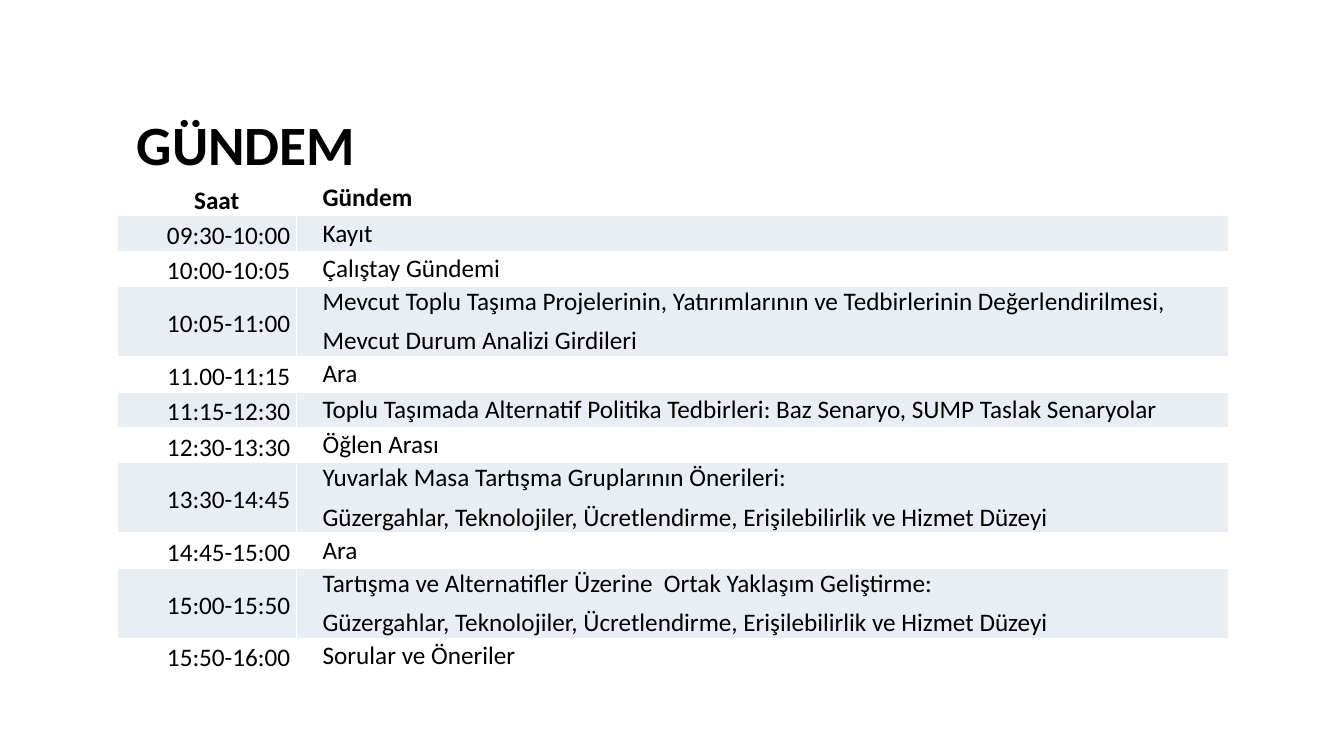
from lxml.etree import SubElement
from pptx import Presentation
from pptx.dml.color import RGBColor
from pptx.enum.text import MSO_ANCHOR, PP_ALIGN
from pptx.oxml.ns import qn
from pptx.util import Inches, Pt

BLACK = RGBColor(0x00, 0x00, 0x00)
WHITE = RGBColor(0xFF, 0xFF, 0xFF)
BAND = RGBColor(0xE9, 0xED, 0xF4)

LEFT = 1.16
COLS = (1.78, 9.25)
HEAD, LINE, PAIR = 0.27, 0.34, 0.57  # row heights: header, one line, two lines

TOPICS = "Güzergahlar, Teknolojiler, Ücretlendirme, Erişilebilirlik ve Hizmet Düzeyi"
AGENDA = [
    ("Saat", "Gündem"),
    ("09:30-10:00", "Kayıt"),
    ("10:00-10:05", "Çalıştay Gündemi"),
    ("10:05-11:00", "Mevcut Toplu Taşıma Projelerinin, Yatırımlarının ve "
                    "Tedbirlerinin Değerlendirilmesi,\nMevcut Durum Analizi Girdileri"),
    ("11.00-11:15", "Ara"),
    ("11:15-12:30", "Toplu Taşımada Alternatif Politika Tedbirleri: "
                    "Baz Senaryo, SUMP Taslak Senaryolar"),
    ("12:30-13:30", "Öğlen Arası"),
    ("13:30-14:45", f"Yuvarlak Masa Tartışma Gruplarının Önerileri:\n{TOPICS}"),
    ("14:45-15:00", "Ara"),
    ("15:00-15:50", f"Tartışma ve Alternatifler Üzerine  Ortak Yaklaşım Geliştirme:\n{TOPICS}"),
    ("15:50-16:00", "Sorular ve Öneriler"),
]


def write(frame, text, size=18, bold=False, align=PP_ALIGN.LEFT,
          indent=0, spacing=1, after=0):
    """Fill a text frame, one paragraph for each line of text."""
    frame.word_wrap = True
    for i, line in enumerate(text.split("\n")):
        para = frame.paragraphs[0] if i == 0 else frame.add_paragraph()
        run = para.add_run()
        run.text = line
        para.alignment = align
        para.line_spacing = spacing
        para.space_after = Pt(after)
        props = para._p.get_or_add_pPr()
        props.set("marL", str(Inches(indent)))
        props.set("indent", "0")
        font = run.font
        font.name, font.size, font.bold = "Calibri", Pt(size), bold
        font.color.rgb = BLACK


def paint(cell, banded):
    """Set the white borders and the fill of a cell."""
    props = cell._tc.get_or_add_tcPr()
    for side in ("lnL", "lnR", "lnT", "lnB"):
        edge = SubElement(props, qn(f"a:{side}"), w=str(Pt(1)))
        fill = SubElement(edge, qn("a:solidFill"))
        SubElement(fill, qn("a:srgbClr"), val=str(WHITE))
    if banded:
        cell.fill.solid()
        cell.fill.fore_color.rgb = BAND
    else:
        cell.fill.background()


def add_title(slide, text):
    box = slide.shapes.add_textbox(Inches(LEFT), Inches(1.23), Inches(2.56), Inches(0.38))
    box.text_frame.vertical_anchor = MSO_ANCHOR.MIDDLE
    write(box.text_frame, text, size=39.6, bold=True, align=PP_ALIGN.CENTER)


def add_agenda(slide):
    rows = [HEAD] + [PAIR if "\n" in topic else LINE for _, topic in AGENDA[1:]]
    table = slide.shapes.add_table(
        len(rows), len(COLS), Inches(LEFT), Inches(1.79),
        Inches(sum(COLS)), Inches(sum(rows))).table
    for col, width in zip(table.columns, COLS):
        col.width = Inches(width)
    for r, (height, texts) in enumerate(zip(rows, AGENDA)):
        table.rows[r].height = Inches(height)
        side = PP_ALIGN.RIGHT if r else PP_ALIGN.CENTER
        forms = (dict(align=side, spacing=1.15, after=10), dict(after=6))
        for c, (text, form) in enumerate(zip(texts, forms)):
            cell = table.cell(r, c)
            cell.margin_left = cell.margin_right = Inches(0.06)
            cell.margin_top = cell.margin_bottom = 0
            cell.vertical_anchor = MSO_ANCHOR.MIDDLE
            paint(cell, r % 2 == 1)
            write(cell.text_frame, text, bold=r == 0, indent=0.2, **form)


def main():
    deck = Presentation()
    deck.slide_width, deck.slide_height = Inches(13.33), Inches(7.5)
    slide = deck.slides.add_slide(deck.slide_layouts[6])
    add_agenda(slide)
    add_title(slide, "GÜNDEM")
    deck.save("out.pptx")


if __name__ == "__main__":
    main()
